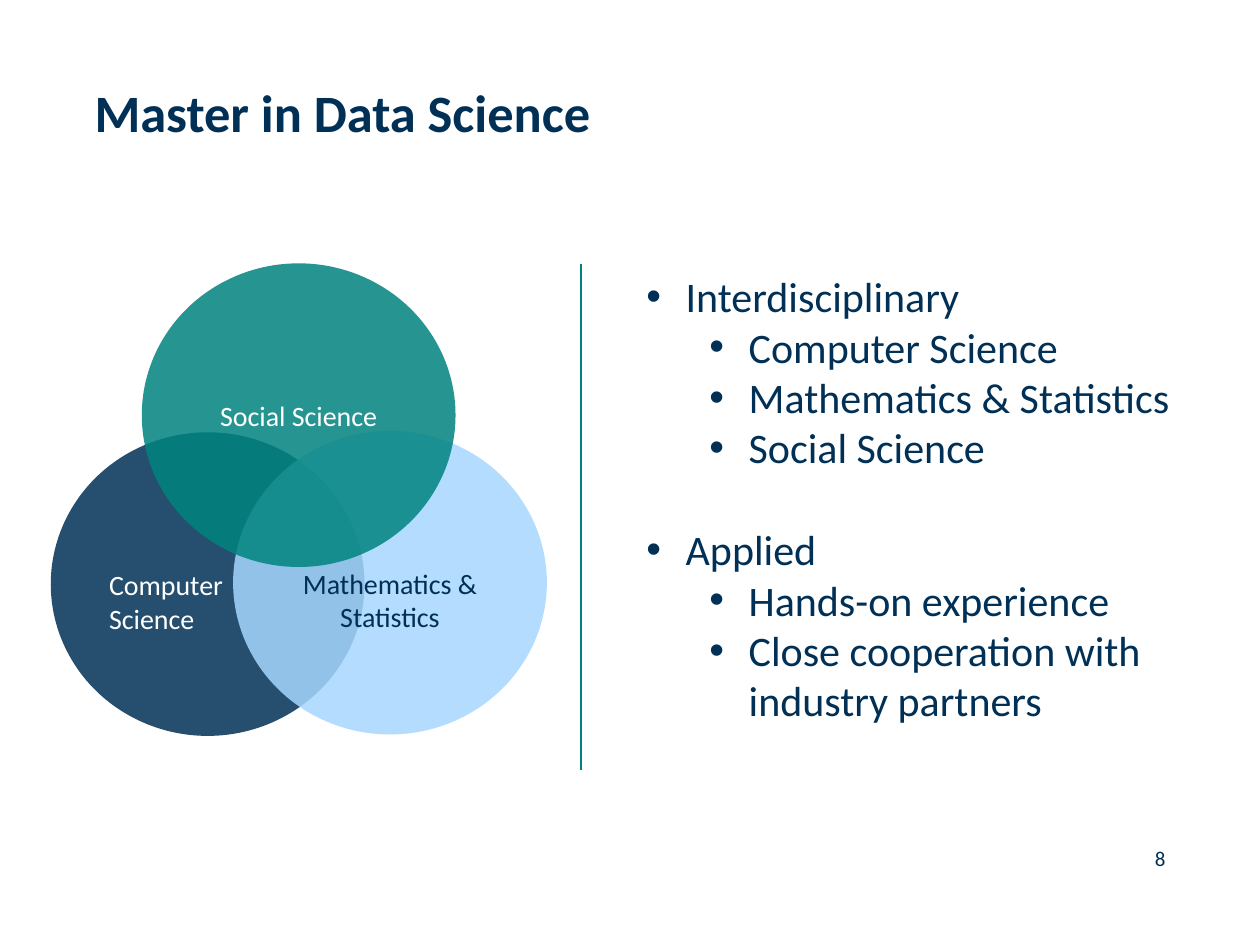
from lxml import etree
from pptx import Presentation
from pptx.dml.color import RGBColor
from pptx.enum.shapes import MSO_CONNECTOR, MSO_SHAPE
from pptx.enum.text import MSO_ANCHOR, PP_ALIGN
from pptx.oxml.ns import qn
from pptx.util import Pt

COLORS = {"navy": "003056", "teal": "00837F", "sky": "A7D7FF", "white": "FFFFFF"}


def add_text(p, text, size, color="navy", bold=False, align=PP_ALIGN.LEFT):
    p.alignment = align
    r = p.add_run()
    r.text = text
    font = {"name": "Calibri", "size": Pt(size), "bold": bold}
    for name, value in font.items():
        setattr(r.font, name, value)
    r.font.color.rgb = RGBColor.from_string(COLORS[color])


def add_box(left, top, width, height, inset=0):
    tf = s.shapes.add_textbox(Pt(left), Pt(top), Pt(width), Pt(height)).text_frame
    tf.word_wrap = True
    for side in ("left", "top", "right", "bottom"):
        setattr(tf, f"margin_{side}", Pt(inset))
    return tf


prs = Presentation()
prs.slide_width, prs.slide_height = Pt(720), Pt(540)
s = prs.slides.add_slide(prs.slide_layouts[6])

add_text(add_box(54, 46, 431, 90).paragraphs[0], "Master in Data Science", 30, bold=True)
add_text(add_box(583, 483, 83, 14.5).paragraphs[0], "8", 12, align=PP_ALIGN.RIGHT)

# Venn diagram: left, top, fill, text colour, alignment, top inset, lines
circles = [
    (29, 247, "navy", "white", PP_ALIGN.LEFT, 23, ["Computer", "Science"]),
    (133.2, 246.2, "sky", "navy", PP_ALIGN.CENTER, 23, ["Mathematics & Statistics"]),
    (81, 150.5, "teal", "white", PP_ALIGN.CENTER, 3.6, ["Social Science"]),
]
for left, top, fill, color, align, inset, lines in circles:
    sp = s.shapes.add_shape(MSO_SHAPE.OVAL, Pt(left), Pt(top), Pt(179.3), Pt(173.5))
    sp.shadow.inherit = False
    sp.line.fill.background()
    sp.fill.solid()
    sp.fill.fore_color.rgb = RGBColor.from_string(COLORS[fill])
    rgb = sp.fill._xPr.find(f".//{qn('a:srgbClr')}")
    etree.SubElement(rgb, qn("a:alpha"), val="85000")
    tf = sp.text_frame
    tf.word_wrap = True
    tf.vertical_anchor = MSO_ANCHOR.MIDDLE
    tf.margin_top = Pt(inset)
    for i, line in enumerate(lines):
        p = tf.add_paragraph() if i else tf.paragraphs[0]
        add_text(p, line, 16, color, align=align)

divider = s.shapes.add_connector(MSO_CONNECTOR.STRAIGHT, Pt(332), Pt(151), Pt(332), Pt(440))
divider.line.width = Pt(0.75)
divider.line.color.rgb = RGBColor.from_string(COLORS["teal"])
etree.SubElement(divider._element.spPr, qn("a:effectLst"))

# Bullets: level, space before, text
bullets = [
    (0, 0, "Interdisciplinary"),
    (1, 0, "Computer Science"),
    (1, 0, "Mathematics & Statistics"),
    (1, 0, "Social Science"),
    (0, 29.3, "Applied"),
    (1, 0, "Hands-on experience"),
    (1, 0, "Close cooperation with industry partners"),
]
tf = add_box(362.2, 151.2, 315.4, 269.3, inset=3.6)
tf.margin_left = tf.margin_right = Pt(7.2)
for i, (level, gap, text) in enumerate(bullets):
    p = tf.add_paragraph() if i else tf.paragraphs[0]
    p.level = level
    p.space_before = Pt(gap)
    pPr = p._p.get_or_add_pPr()
    pPr.set("marL", str(Pt(22.5 + 36 * level)))
    pPr.set("indent", str(-Pt(22.5)))
    bullet_color = etree.SubElement(pPr, qn("a:buClr"))
    etree.SubElement(bullet_color, qn("a:srgbClr"), val=COLORS["navy"])
    etree.SubElement(pPr, qn("a:buFont"), typeface="Arial")
    etree.SubElement(pPr, qn("a:buChar"), char="•")
    add_text(p, text, 24)

prs.save("out.pptx")
